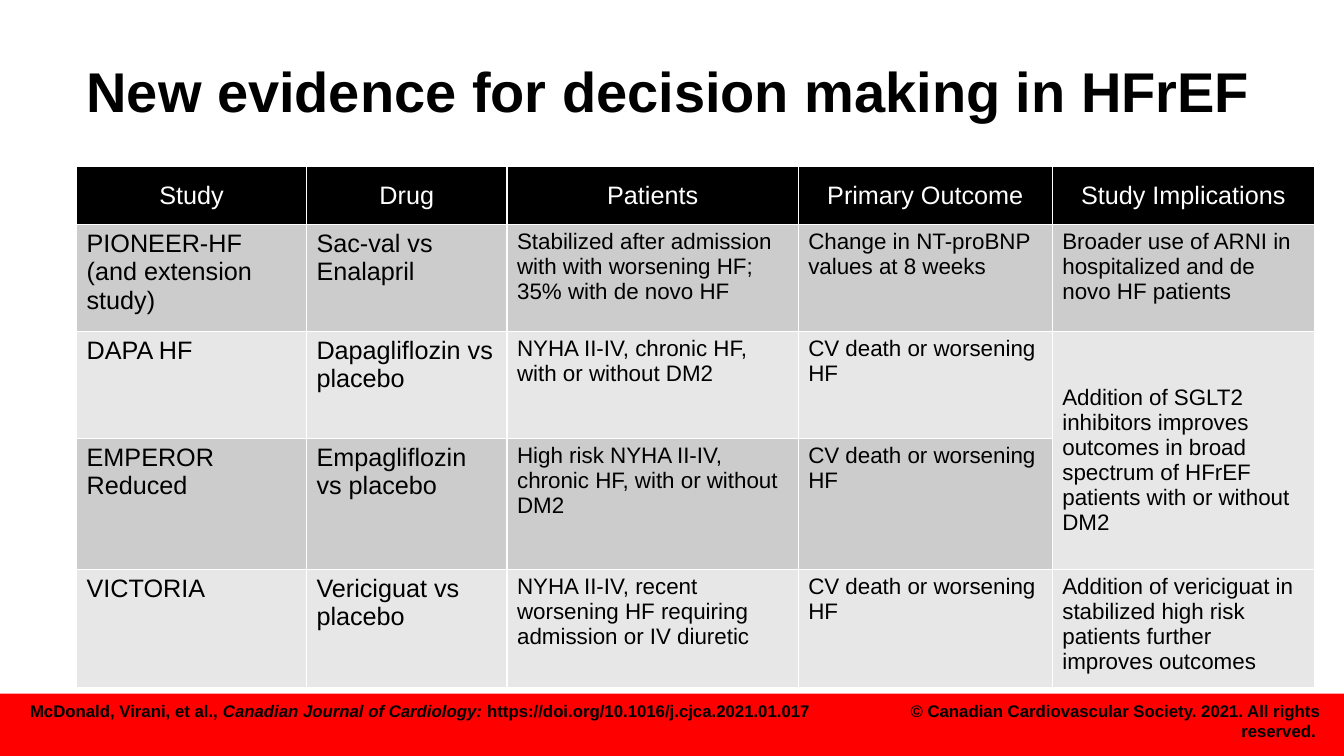
from dataclasses import dataclass

from lxml.etree import SubElement, fromstring
from pptx import Presentation
from pptx.dml.color import RGBColor
from pptx.enum.shapes import MSO_SHAPE
from pptx.enum.text import MSO_ANCHOR, PP_ALIGN
from pptx.oxml.ns import qn
from pptx.util import Pt


@dataclass(frozen=True)
class Theme:
    """Colours, font and type sizes of the slide."""
    font: str = "Arial"
    black: str = "000000"
    white: str = "FFFFFF"
    red: str = "FF0000"
    bands: tuple = ("CCCCCC", "E7E7E7")
    title_size: int = 40
    label_size: int = 18
    detail_size: int = 16
    footer_size: int = 12


THEME = Theme()
SLIDE_WIDTH, SLIDE_HEIGHT = 960, 540
COLUMN_WIDTHS = [164.2, 143.3, 208, 181.5, 187.2]
ROW_HEIGHTS = [41.5, 76.4, 76.4, 93.6, 76.4]
HEADINGS = ["Study", "Drug", "Patients", "Primary Outcome", "Study Implications"]
CV_OUTCOME = "CV death or worsening HF"
STUDIES = [
    ["PIONEER-HF (and extension study)", "Sac-val vs Enalapril",
     "Stabilized after admission with with worsening HF;\n35% with de novo HF",
     "Change in NT-proBNP values at 8 weeks",
     "Broader use of ARNI in hospitalized and de novo HF patients"],
    ["DAPA HF", "Dapagliflozin vs placebo",
     "NYHA II-IV, chronic HF,\nwith or without DM2", CV_OUTCOME,
     "Addition of SGLT2 inhibitors improves outcomes in broad spectrum of "
     "HFrEF patients with or without DM2"],
    ["EMPEROR Reduced", "Empagliflozin vs placebo",
     "High risk NYHA II-IV, chronic HF, with or without DM2", CV_OUTCOME, ""],
    ["VICTORIA", "Vericiguat vs placebo",
     "NYHA II-IV, recent worsening HF requiring admission or IV diuretic",
     CV_OUTCOME,
     "Addition of vericiguat in stabilized high risk patients further improves outcomes"],
]
SHADOW = (
    '<a:effectLst xmlns:a="http://schemas.openxmlformats.org/drawingml/2006/main">'
    '<a:outerShdw blurRad="38100" dist="38100" dir="2700000">'
    '<a:srgbClr val="000000"><a:alpha val="43000"/></a:srgbClr>'
    '</a:outerShdw></a:effectLst>'
)


def style_font(font, size, color, bold=False):
    """Set the typeface, size, colour and weight of a font."""
    font.name = THEME.font
    font.size = Pt(size)
    font.bold = bold
    font.color.rgb = RGBColor.from_string(color)


def add_line(slide, box, pieces, size, align=PP_ALIGN.LEFT):
    """Add a bold one-paragraph text box from (text, italic) pieces."""
    frame = slide.shapes.add_textbox(*map(Pt, box)).text_frame
    frame.word_wrap = True
    paragraph = frame.paragraphs[0]
    paragraph.alignment = align
    for text, italic in pieces:
        run = paragraph.add_run()
        run.text = text
        style_font(run.font, size, THEME.black, bold=True)
        run.font.italic = italic
    return frame


def add_title(slide, text):
    """Add the slide title."""
    frame = add_line(slide, (54.7, 28.8, 850.3, 77), [(text, False)], THEME.title_size)
    frame.vertical_anchor = MSO_ANCHOR.MIDDLE
    frame.paragraphs[0].line_spacing = 0.9


def add_footer(slide):
    """Add the red band with the citation and the copyright line."""
    band = slide.shapes.add_shape(
        MSO_SHAPE.RECTANGLE, 0, Pt(495.4), Pt(SLIDE_WIDTH), Pt(44.6))
    band.shadow.inherit = False
    band.fill.solid()
    band.fill.fore_color.rgb = RGBColor.from_string(THEME.red)
    band.line.fill.background()
    citation = add_line(
        slide, (14.4, 496.8, 590.4, 21.6),
        [("McDonald, Virani, et al., ", False),
         ("Canadian Journal of Cardiology: ", True),
         ("https://doi.org/10.1016/j.cjca.2021.01.017", False)],
        THEME.footer_size)
    rights = add_line(
        slide, (626.4, 496.8, 324, 21.6),
        [("© Canadian Cardiovascular Society. 2021. All rights reserved. ", False)],
        THEME.footer_size, PP_ALIGN.RIGHT)
    for frame in (citation, rights):
        for run in frame.paragraphs[0].runs:
            run.font.fill._xPr.find(qn("a:solidFill")).addnext(fromstring(SHADOW))


def add_borders(cell):
    """Draw thin white lines on all four sides of a cell."""
    properties = cell._tc.get_or_add_tcPr()
    for position, side in enumerate(("a:lnL", "a:lnR", "a:lnT", "a:lnB")):
        border = SubElement(properties, qn(side), w=str(Pt(1)))
        fill = SubElement(border, qn("a:solidFill"))
        SubElement(fill, qn("a:srgbClr"), val=THEME.white)
        properties.insert(position, border)


def fill_cell(cell, text, fill, size, color, align=PP_ALIGN.LEFT):
    """Write a cell's text and set its fill, font and borders."""
    cell.text_frame.text = text
    cell.fill.solid()
    cell.fill.fore_color.rgb = RGBColor.from_string(fill)
    for paragraph in cell.text_frame.paragraphs:
        paragraph.alignment = align
        style_font(paragraph.font, size, color)
        for run in paragraph.runs:
            style_font(run.font, size, color)
    add_borders(cell)


def add_study_table(slide):
    """Add the table of trials, with one implication shared by two of them."""
    table = slide.shapes.add_table(
        len(ROW_HEIGHTS), len(COLUMN_WIDTHS), Pt(54.7), Pt(119),
        Pt(sum(COLUMN_WIDTHS)), Pt(sum(ROW_HEIGHTS))).table
    for column, width in zip(table.columns, COLUMN_WIDTHS):
        column.width = Pt(width)
    for row, height in zip(table.rows, ROW_HEIGHTS):
        row.height = Pt(height)
    for column, heading in enumerate(HEADINGS):
        cell = table.cell(0, column)
        fill_cell(cell, heading, THEME.black, THEME.label_size, THEME.white,
                  PP_ALIGN.CENTER)
        cell.vertical_anchor = MSO_ANCHOR.MIDDLE
    for row, study in enumerate(STUDIES, start=1):
        for column, text in enumerate(study):
            size = THEME.label_size if column < 2 else THEME.detail_size
            fill_cell(table.cell(row, column), text, THEME.bands[(row - 1) % 2],
                      size, THEME.black)
    shared_implication = table.cell(2, 4)
    shared_implication.merge(table.cell(3, 4))
    shared_implication.margin_top = Pt(38.6)


def main():
    """Build and save the slide."""
    presentation = Presentation()
    presentation.slide_width = Pt(SLIDE_WIDTH)
    presentation.slide_height = Pt(SLIDE_HEIGHT)
    slide = presentation.slides.add_slide(presentation.slide_layouts[6])
    add_footer(slide)
    add_title(slide, "New evidence for decision making in HFrEF")
    add_study_table(slide)
    presentation.save("out.pptx")


if __name__ == "__main__":
    main()
